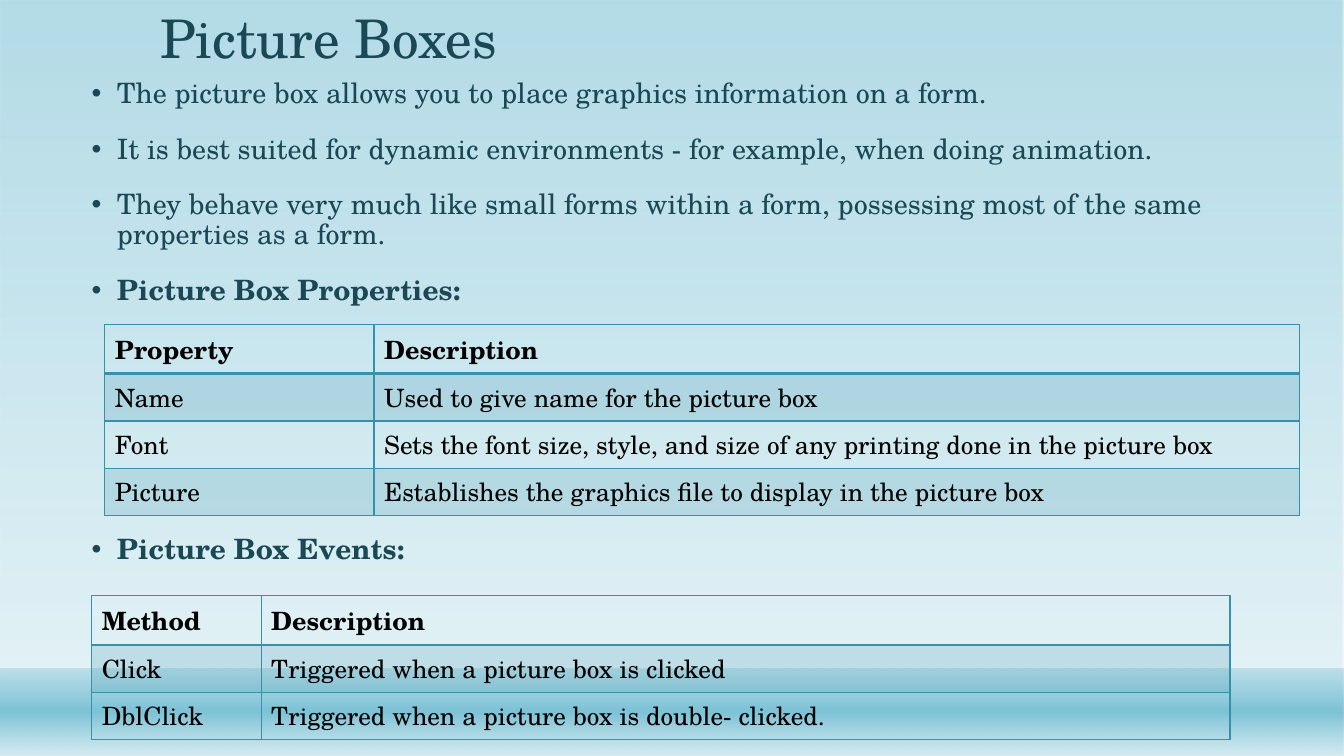
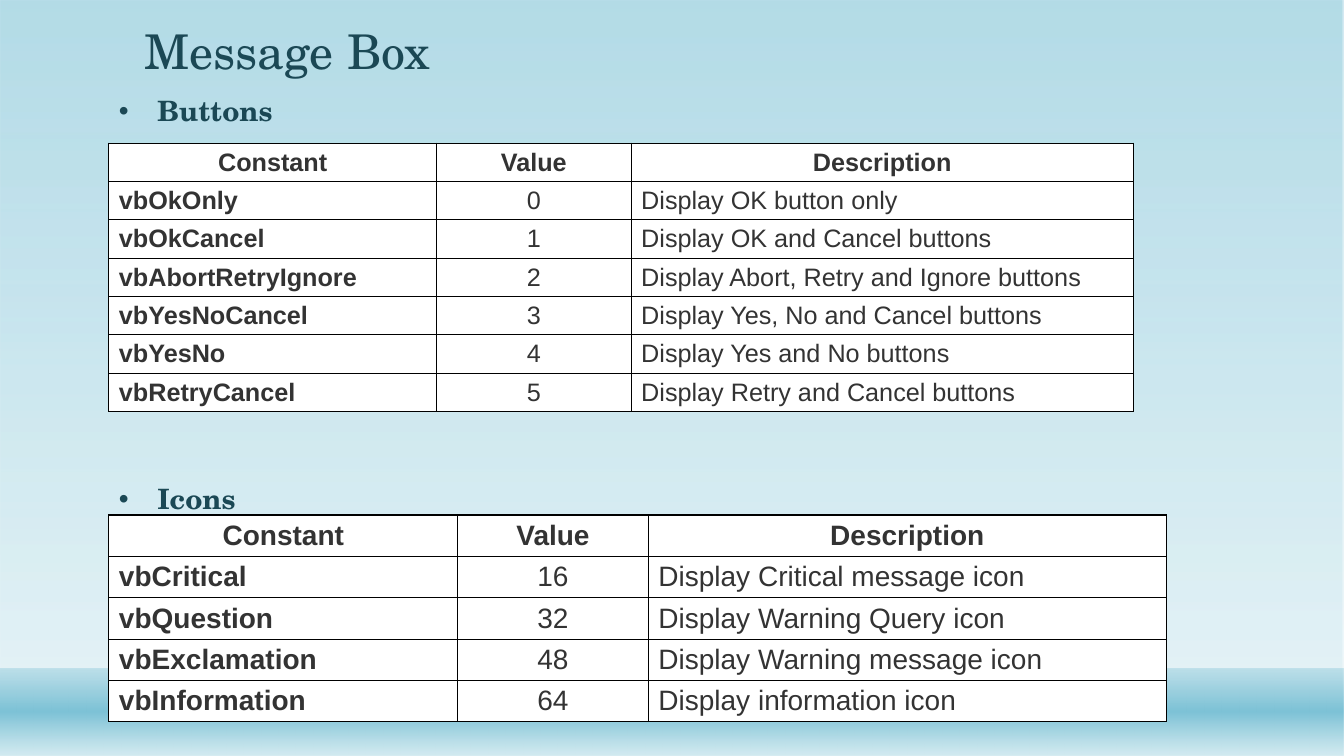
import dataclasses

import lxml.etree
import pptx
import pptx.dml.color
import pptx.enum.shapes
import pptx.enum.text
import pptx.oxml.ns
import pptx.util

Inches = pptx.util.Inches
Pt = pptx.util.Pt
qn = pptx.oxml.ns.qn
Align = pptx.enum.text.PP_ALIGN
Anchor = pptx.enum.text.MSO_ANCHOR


@dataclasses.dataclass(frozen=True)
class TableStyle:
    font: str
    text: str
    border: str
    header_rule: float = 1
    fill: str = ""
    band: str = ""
    band_opacity: int = 100
    header_align: Align = Align.LEFT
    bold_first_column: bool = False
    anchor: Anchor = Anchor.TOP


@dataclasses.dataclass(frozen=True)
class Theme:
    font: str = "TeX Gyre Schola"
    ink: str = "1B4855"
    deep: str = "7DC2D6"
    pale: str = "D4EBF1"
    title_size: float = 38
    body_size: float = 20
    table_size: float = 18
    large_table_size: float = 20
    line_spacing: float = 0.9
    bullet_gap: float = 18
    banded: TableStyle = TableStyle(
        "TeX Gyre Schola", "000000", "3691AA", header_rule=2,
        band="3691AA", band_opacity=20)
    grid: TableStyle = TableStyle(
        "Arial", "333333", "000000", fill="FFFFFF", header_align=Align.CENTER,
        bold_first_column=True, anchor=Anchor.MIDDLE)


THEME = Theme()


def add_color(parent, color, opacity=100):
    element = lxml.etree.SubElement(parent, qn("a:srgbClr"), val=color)
    if opacity < 100:
        lxml.etree.SubElement(element, qn("a:alpha"), val=str(opacity * 1000))


def write_text(paragraph, text, *, font=THEME.font, size=THEME.body_size, color=THEME.ink,
               bold=False, align=Align.LEFT, line_spacing=None, space_before=0, indent=None):
    paragraph.alignment = align
    paragraph.space_before = Pt(space_before)
    if line_spacing:
        paragraph.line_spacing = line_spacing
    if indent:
        left, hanging = indent
        properties = paragraph._p.get_or_add_pPr()
        properties.set("marL", str(Inches(left)))
        properties.set("indent", str(-Inches(hanging)))
        lxml.etree.SubElement(properties, qn("a:buFont"), typeface="Arial")
        lxml.etree.SubElement(properties, qn("a:buChar"), char="•")
    run = paragraph.add_run()
    run.text = text
    run.font.name = font
    run.font.size = Pt(size)
    run.font.bold = bold
    run.font.color.rgb = pptx.dml.color.RGBColor.from_string(color)


class Deck:
    def __init__(self, theme):
        self.theme = theme
        self.presentation = pptx.Presentation()
        self.presentation.slide_width = Inches(13.33)
        self.presentation.slide_height = Inches(7.5)
        self.slide = None

    def add_slide(self):
        first = self.slide is None
        self.slide = self.presentation.slides.add_slide(self.presentation.slide_layouts[1])
        if first:
            deep, pale = self.theme.deep, self.theme.pale
            self.add_master_band(0, 0, 7.5, [(0, deep, 58), (88, pale, 65)])
            self.add_master_band(1, 6.63, 0.87, [(1, deep, 38), (49, deep, 100), (100, pale, 89)])

    def add_master_band(self, order, top, height, stops):
        shape = self.slide.shapes.add_shape(
            pptx.enum.shapes.MSO_SHAPE.RECTANGLE, 0, Inches(top),
            self.presentation.slide_width, Inches(height))
        shape.shadow.inherit = False
        shape.line.fill.background()
        shape.fill.gradient()
        shape.fill.gradient_angle = 270
        stop_list = shape._element.spPr.find(".//" + qn("a:gsLst"))
        stop_list.clear()
        for position, color, opacity in stops:
            stop = lxml.etree.SubElement(stop_list, qn("a:gs"), pos=str(position * 1000))
            add_color(stop, color, opacity)
        shape._element.nvSpPr.cNvPr.set("id", str(100 + order))
        self.presentation.slide_master.shapes._spTree.insert(2 + order, shape._element)

    def place(self, placeholder, box, anchor):
        placeholder.left, placeholder.top, placeholder.width, placeholder.height = map(Inches, box)
        frame = placeholder.text_frame
        frame.word_wrap = True
        frame.auto_size = pptx.enum.text.MSO_AUTO_SIZE.NONE
        frame.vertical_anchor = anchor
        return frame

    def add_title(self, text, box, size=THEME.title_size):
        frame = self.place(self.slide.shapes.title, box, Anchor.BOTTOM)
        write_text(frame.paragraphs[0], text, size=size, line_spacing=self.theme.line_spacing)

    def add_bullets(self, items, box, indent):
        frame = self.place(self.slide.placeholders[1], box, Anchor.TOP)
        for index, (text, bold, gap) in enumerate(items):
            paragraph = frame.add_paragraph() if index else frame.paragraphs[0]
            write_text(paragraph, text, bold=bold, indent=indent,
                       space_before=gap if index else 0,
                       line_spacing=self.theme.line_spacing)

    def add_table(self, rows, position, columns, row_heights, style,
                  size=THEME.table_size, aligns=None):
        left, top = position
        header_height, body_height = row_heights
        heights = [header_height] + [body_height] * (len(rows) - 1)
        table = self.slide.shapes.add_table(
            len(rows), len(columns), Inches(left), Inches(top),
            Inches(sum(columns)), Inches(sum(heights))).table
        table.horz_banding = False
        for column, width in zip(table.columns, columns):
            column.width = Inches(width)
        for row_index, (values, height) in enumerate(zip(rows, heights)):
            table.rows[row_index].height = Inches(height)
            for column_index, value in enumerate(values):
                cell = table.cell(row_index, column_index)
                header = row_index == 0
                align = aligns[column_index] if aligns else Align.LEFT
                write_text(cell.text_frame.paragraphs[0], value, font=style.font,
                           size=size, color=style.text,
                           bold=header or (style.bold_first_column and column_index == 0),
                           align=style.header_align if header else align)
                cell.vertical_anchor = style.anchor
                self.format_cell(cell, row_index, style)

    def format_cell(self, cell, row_index, style):
        properties = cell._tc.get_or_add_tcPr()
        for side in "LRTB":
            header_edge = (side, row_index) in (("B", 0), ("T", 1))
            width = style.header_rule if header_edge else 1
            line = lxml.etree.SubElement(properties, qn("a:ln" + side), w=str(Pt(width)))
            add_color(lxml.etree.SubElement(line, qn("a:solidFill")), style.border)
        banded = style.band and row_index % 2 == 1
        color = style.band if banded else style.fill
        if color:
            fill = lxml.etree.SubElement(properties, qn("a:solidFill"))
            add_color(fill, color, style.band_opacity if banded else 100)
        else:
            cell.fill.background()


def build_picture_boxes(deck):
    gap = deck.theme.bullet_gap
    deck.add_slide()
    deck.add_title("Picture Boxes", (1.49, 0.07, 10.95, 0.67))
    deck.add_bullets([
        ("The picture box allows you to place graphics information on a form.", False, gap),
        ("It is best suited for dynamic environments - for example, when doing animation.",
         False, gap),
        ("They behave very much like small forms within a form, possessing most of the same "
         "properties as a form.", False, gap),
        ("Picture Box Properties:", True, gap),
        ("Picture Box Events:", True, 163.5),
    ], (0.76, 0.74, 12.17, 6.4), (0.3, 0.25))
    row_heights = (0.48, 0.47)
    deck.add_table([
        ("Property", "Description"),
        ("Name", "Used to give name for the picture box"),
        ("Font", "Sets the font size, style, and size of any printing done in the picture box"),
        ("Picture", "Establishes the graphics file to display in the picture box"),
    ], (1.04, 3.22), (2.67, 9.18), row_heights, deck.theme.banded)
    deck.add_table([
        ("Method", "Description"),
        ("Click", "Triggered when a picture box is clicked"),
        ("DblClick", "Triggered when a picture box is double- clicked."),
    ], (0.91, 5.91), (1.68, 9.61), row_heights, deck.theme.banded)


def build_message_box(deck):
    deck.add_slide()
    deck.add_title("Message Box", (1.33, 0.17, 10.5, 0.67), size=34.2)
    deck.add_bullets([("Buttons", True, 0), ("Icons", True, 255)],
                     (1.08, 0.92, 11.75, 6.25), (0.38, 0.38))
    header = ("Constant", "Value", "Description")
    aligns = (Align.LEFT, Align.CENTER, Align.LEFT)
    deck.add_table([
        header,
        ("vbOkOnly", "0", "Display OK button only"),
        ("vbOkCancel", "1", "Display OK and Cancel buttons"),
        ("vbAbortRetryIgnore", "2", "Display Abort, Retry and Ignore buttons"),
        ("vbYesNoCancel", "3", "Display Yes, No and Cancel buttons"),
        ("vbYesNo", "4", "Display Yes and No buttons"),
        ("vbRetryCancel", "5", "Display Retry and Cancel buttons"),
    ], (1.08, 1.42), (3.25, 1.93, 4.98), (0.38, 0.38), deck.theme.grid, aligns=aligns)
    deck.add_table([
        header,
        ("vbCritical", "16", "Display Critical message icon"),
        ("vbQuestion", "32", "Display Warning Query icon"),
        ("vbExclamation", "48", "Display Warning message icon"),
        ("vbInformation", "64", "Display information icon"),
    ], (1.08, 5.11), (3.46, 1.89, 5.14), (0.41, 0.41), deck.theme.grid,
        size=deck.theme.large_table_size, aligns=aligns)


def main():
    deck = Deck(THEME)
    build_picture_boxes(deck)
    build_message_box(deck)
    deck.presentation.save("out.pptx")


if __name__ == "__main__":
    main()
